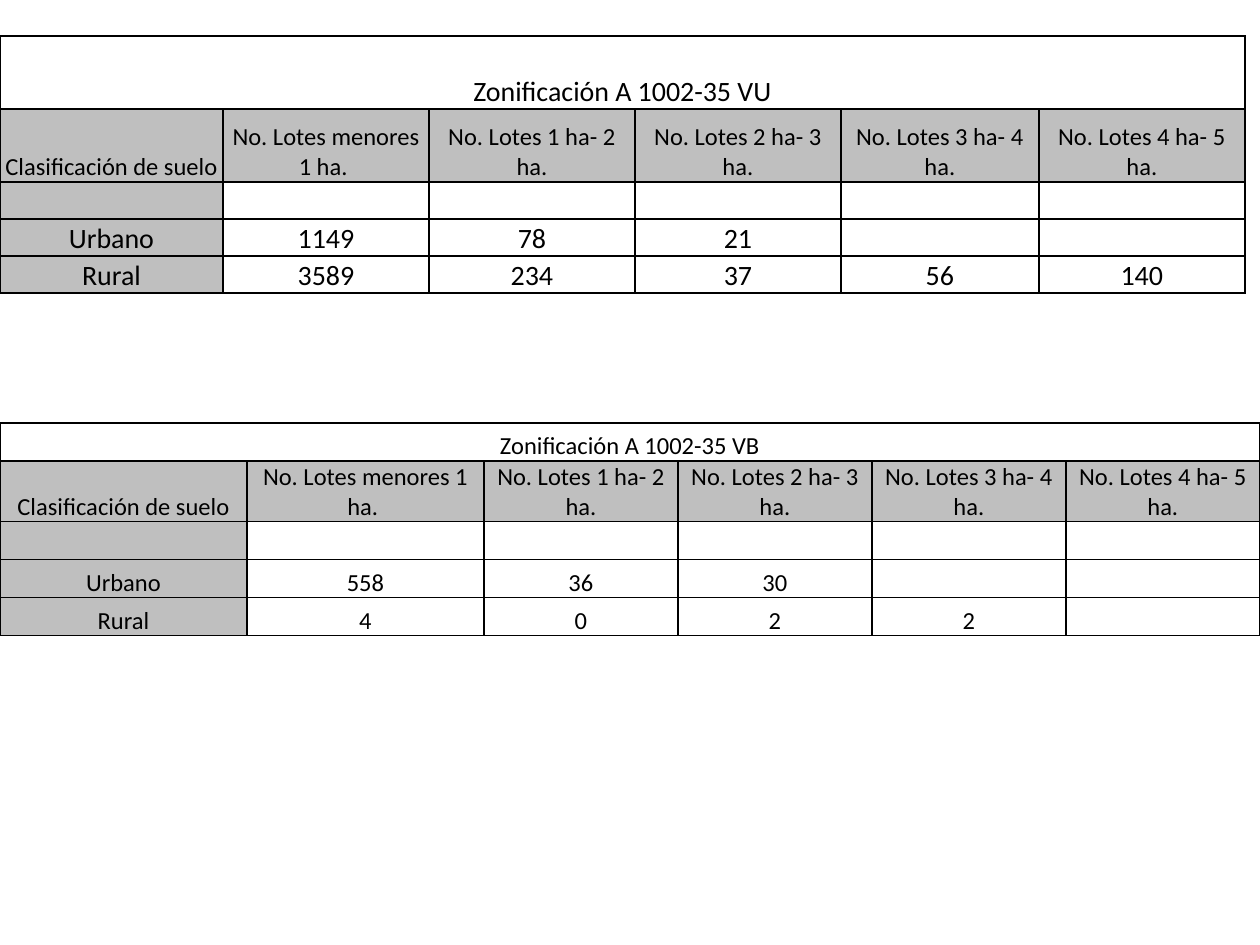
from lxml import etree
from pptx import Presentation, util as u
from pptx.dml.color import RGBColor
from pptx.enum import text
from pptx.oxml import ns

FONT = "Calibri"
BLACK, GRAY = "000000", "BFBFBF"
HEADERS = ["Clasificación de suelo", "No. Lotes menores 1 ha. "] + [
    f"No. Lotes {size} ha- {size + 1} ha." for size in range(1, 5)]


def px(length):
    return u.Emu(round(length * 914400 / 126))


def color(value):
    return RGBColor.from_string(value)


def add_borders(cell):
    properties = cell._tc.get_or_add_tcPr()
    for side in ("lnL", "lnR", "lnT", "lnB"):
        line = etree.SubElement(properties, ns.qn(f"a:{side}"), w=str(u.Pt(1)))
        fill = etree.SubElement(line, ns.qn("a:solidFill"))
        etree.SubElement(fill, ns.qn("a:srgbClr"), val=BLACK)


def format_cell(cell, fill):
    # Side margins keep the long headers off the borders and let them wrap
    cell.margin_left = cell.margin_right = px(3)
    cell.margin_top = px(1)
    cell.margin_bottom = 0
    cell.vertical_anchor = text.MSO_ANCHOR.BOTTOM
    add_borders(cell)
    if fill:
        cell.fill.solid()
        cell.fill.fore_color.rgb = color(fill)
    else:
        cell.fill.background()


def write_cell(cell, content, size):
    paragraph = cell.text_frame.paragraphs[0]
    paragraph.alignment = text.PP_ALIGN.CENTER
    if content == "":
        # An empty cell keeps the text size, so its row does not grow
        etree.SubElement(paragraph._p, ns.qn("a:endParaRPr"), sz=str(size * 100))
        return
    run = paragraph.add_run()
    run.text = str(content)
    run.font.name = FONT
    run.font.size = u.Pt(size)
    run.font.color.rgb = color(BLACK)


def add_zoning_table(slide, top, widths, heights, sizes, title, urban, rural):
    rows = [[title], HEADERS, [], ["Urbano"] + urban, ["Rural"] + rural]
    frame = slide.shapes.add_table(len(rows), len(widths), 0, px(top),
                                   px(sum(widths)), px(sum(heights)))
    table = frame.table
    table.first_row = table.horz_banding = False
    for column, width in zip(table.columns, widths):
        column.width = px(width)
    for row, height in zip(table.rows, heights):
        row.height = px(height)
    table.cell(0, 0).merge(table.cell(0, len(widths) - 1))

    for r, (values, size) in enumerate(zip(rows, sizes)):
        padded = values + [""] * (len(widths) - len(values))
        for c, value in enumerate(padded):
            cell = table.cell(r, c)
            shaded = r == 1 or (r > 1 and c == 0)
            format_cell(cell, GRAY if shaded else None)
            write_cell(cell, value, size)


def main():
    presentation = Presentation()
    presentation.slide_width, presentation.slide_height = px(1260), px(945)
    slide = presentation.slides.add_slide(presentation.slide_layouts[6])

    # Upper table: VU zoning
    add_zoning_table(slide, 36, [223, 206, 206, 206, 198, 206],
                     [73, 73, 37, 37, 37], [16, 14, 16, 16, 16],
                     "Zonificación A 1002-35 VU",
                     [1149, 78, 21], [3589, 234, 37, 56, 140])

    # Lower table: VB zoning
    add_zoning_table(slide, 423, [247, 237] + [194] * 4,
                     [38, 60, 38, 38, 38], [14] * 5,
                     "Zonificación A 1002-35 VB",
                     [558, 36, 30], [4, 0, 2, 2])

    presentation.save("out.pptx")


if __name__ == "__main__":
    main()
